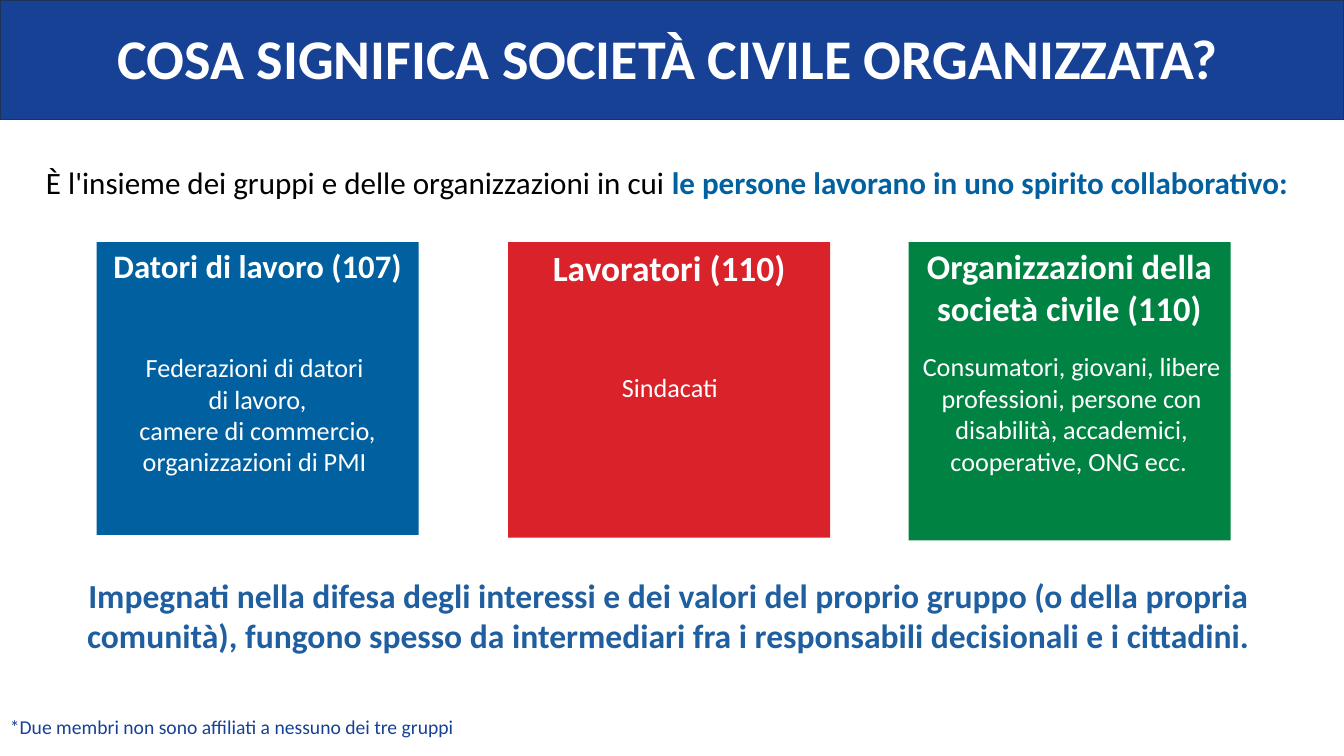
from pptx import Presentation
from pptx.dml.color import RGBColor
from pptx.enum.shapes import MSO_SHAPE as Preset
from pptx.enum.text import MSO_ANCHOR as Anchor, MSO_AUTO_SIZE as AutoSize, PP_ALIGN as Align
from pptx.oxml.ns import qn
from pptx.util import Pt
from lxml.etree import SubElement

WHITE = RGBColor(0xFF, 0xFF, 0xFF)
BLACK = RGBColor(0x00, 0x00, 0x00)
NAVY = RGBColor(0x17, 0x41, 0x95)
NAVY_EDGE = RGBColor(0x1E, 0x32, 0x56)
BLUE = RGBColor(0x00, 0x60, 0xA0)
RED = RGBColor(0xD9, 0x22, 0x2A)
GREEN = RGBColor(0x00, 0x83, 0x42)
STEEL = RGBColor(0x1F, 0x5F, 0xA0)

CARD_TOP, CARD_WIDTH = 173, 230

# left, fill, height, heading, heading size, heading box (top, height),
# members, members box (left offset, top, width, height)
GROUPS = [
    (69, BLUE, 209, "Datori di lavoro (107)", 23.4, (172, 39),
     ["Federazioni di datori ", "di lavoro,", "camere di commercio,",
      "organizzazioni di PMI "], (0, 247.5, 230, 120)),
    (363, RED, 211, "Lavoratori (110)", 25.3, (172, 39),
     ["Sindacati"], (0.5, 261.5, 230, 30)),
    (649, GREEN, 213, "Organizzazioni della società civile (110)", 24.7, (171.5, 62),
     ["Consumatori, giovani, libere professioni, persone con disabilità, "
      "accademici, cooperative, ONG ecc. "], (0, 247, 233, 143)),
]


def place(shape, left, top, width, height):
    box = {"left": left, "top": top, "width": width, "height": height}
    for side, points in box.items():
        setattr(shape, side, Pt(points))


def format_frame(frame, inset=(7.2, 3.6)):
    across, down = inset
    settings = {
        "word_wrap": True, "auto_size": AutoSize.NONE, "vertical_anchor": Anchor.TOP,
        "margin_left": Pt(across), "margin_right": Pt(across),
        "margin_top": Pt(down), "margin_bottom": Pt(down),
    }
    for name, value in settings.items():
        setattr(frame, name, value)


def add_run(paragraph, text, size, color, bold=False):
    run = paragraph.add_run()
    run.text = text
    settings = {"name": "Calibri", "size": Pt(size), "bold": bold}
    for name, value in settings.items():
        setattr(run.font, name, value)
    run.font.color.rgb = color


def add_text(slide, box, lines, size, color, bold=False, align=Align.CENTER,
             inset=(7.2, 3.6)):
    frame = slide.shapes.add_textbox(*map(Pt, box)).text_frame
    format_frame(frame, inset)
    for number, line in enumerate(lines):
        paragraph = frame.add_paragraph() if number else frame.paragraphs[0]
        paragraph.alignment = align
        add_run(paragraph, line, size, color, bold)
    return frame


def add_rectangle(slide, box, fill, edge=None):
    rectangle = slide.shapes.add_shape(Preset.RECTANGLE, *map(Pt, box))
    rectangle.shadow.inherit = False
    rectangle.fill.solid()
    rectangle.fill.fore_color.rgb = fill
    if edge is None:
        rectangle.line.fill.background()
    else:
        rectangle.line.color.rgb = edge
        rectangle.line.width = Pt(1)
    return rectangle


def fill_title(slide):
    title = slide.shapes.title
    place(title, -6.5, 13, 967, 84)
    format_frame(title.text_frame)
    paragraph = title.text_frame.paragraphs[0]
    paragraph.alignment = Align.CENTER
    add_run(paragraph, "COSA SIGNIFICA SOCIETÀ CIVILE ORGANIZZATA?", 40, WHITE, True)
    # The banner goes behind the title
    banner = add_rectangle(slide, (0, 0.5, 960, 85), NAVY, NAVY_EDGE)
    title.element.addprevious(banner.element)


def fill_definition(slide):
    definition = slide.placeholders[1]
    place(definition, -3.5, 116, 960, 41)
    format_frame(definition.text_frame)
    paragraph = definition.text_frame.paragraphs[0]
    settings = {"alignment": Align.CENTER, "line_spacing": 0.9, "space_before": Pt(5)}
    for name, value in settings.items():
        setattr(paragraph, name, value)
    # No bullet or hanging indent
    properties = paragraph._p.get_or_add_pPr()
    properties.set("marL", "0")
    properties.set("indent", "0")
    SubElement(properties, qn("a:buNone"))
    add_run(paragraph, "È l'insieme dei gruppi e delle organizzazioni in cui ", 22.2, BLACK)
    add_run(paragraph, "le persone lavorano in uno spirito collaborativo:", 22.2, BLUE, True)


def add_group(slide, left, fill, height, heading, size, heading_box, members, members_box):
    add_rectangle(slide, (left, CARD_TOP, CARD_WIDTH, height), fill)
    top, heading_height = heading_box
    add_text(slide, (left, top, CARD_WIDTH, heading_height), [heading], size, WHITE, True)
    offset, *rest = members_box
    add_text(slide, (left + offset, *rest), members, 18.7, WHITE)


def main():
    deck = Presentation()
    deck.slide_width, deck.slide_height = Pt(960), Pt(540)
    slide = deck.slides.add_slide(deck.slide_layouts[1])

    # Title and definition
    fill_title(slide)
    fill_definition(slide)

    # The three groups
    for group in GROUPS:
        add_group(slide, *group)

    # Role and footnote
    role = add_text(
        slide, (25, 405.5, 905, 114.5),
        ["Impegnati nella difesa degli interessi e dei valori del proprio gruppo "
         "(o della propria comunità), fungono spesso da intermediari fra i "
         "responsabili decisionali e i cittadini."],
        24, STEEL, True, inset=(9.4, 5))
    role.paragraphs[0].space_before = Pt(4.8)
    add_text(slide, (0, 507, 672.5, 24.5),
             ["*Due membri non sono affiliati a nessuno dei tre gruppi"],
             14, NAVY, align=Align.LEFT)

    deck.save("out.pptx")


if __name__ == "__main__":
    main()
